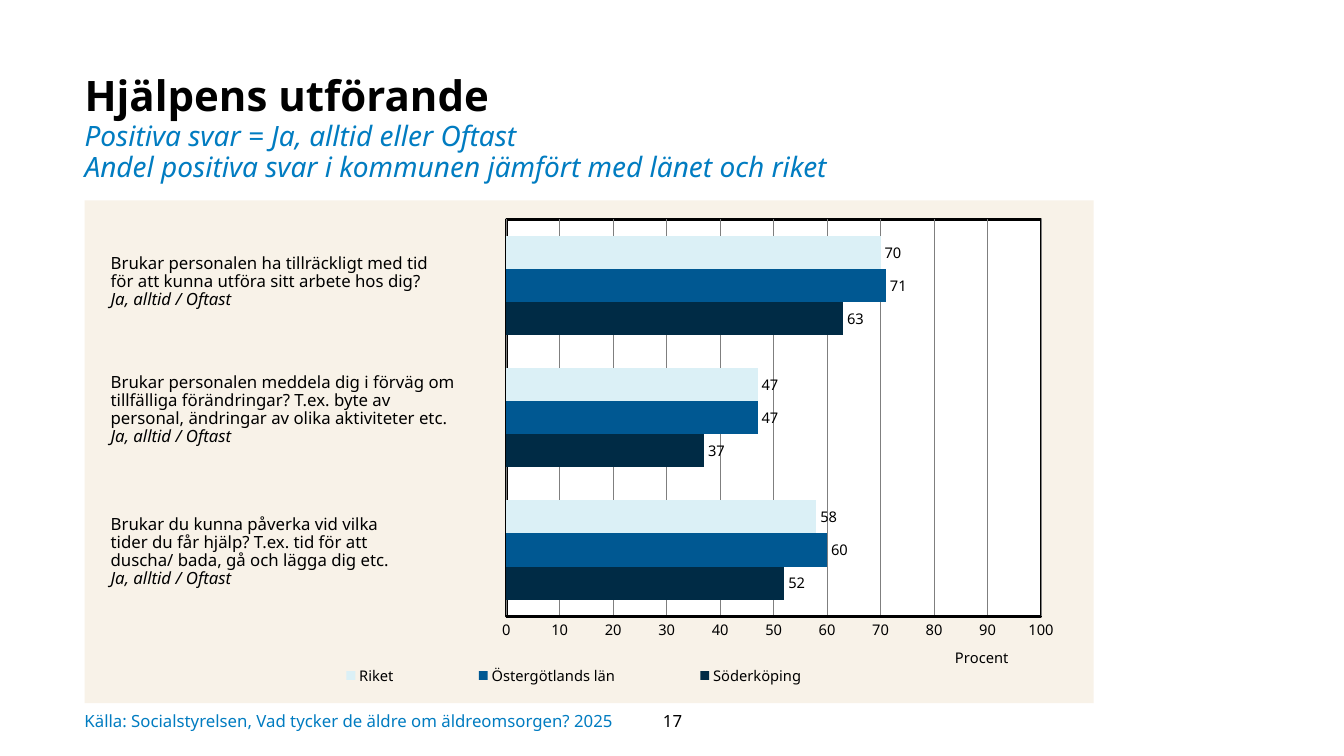
from dataclasses import dataclass

from lxml import etree
from pptx import Presentation
from pptx import util as u
from pptx.chart import data as chart_data
from pptx.dml import color
from pptx.enum import chart as ch
from pptx.enum import text
from pptx.oxml import ns


@dataclass(frozen=True)
class Theme:
    font: str = "Noto Sans"
    black: str = "000000"
    white: str = "FFFFFF"
    accent: str = "017CC1"
    panel: str = "F8F2E8"
    grid: str = "7F7F7F"
    navy: str = "002B45"
    blue: str = "005892"
    pale: str = "DBF0F6"
    heading: float = 30
    subheading: float = 20
    body: float = 12
    chart: float = 10.5


def rgb(value):
    return color.RGBColor.from_string(value)


def set_layout(element, index, inner=False, **fractions):
    for old in element.findall(ns.qn("c:layout")):
        element.remove(old)
    layout = etree.Element(ns.qn("c:layout"))
    manual = etree.SubElement(layout, ns.qn("c:manualLayout"))
    settings = {"layoutTarget": "inner"} if inner else {}
    settings |= {"xMode": "edge", "yMode": "edge", **fractions}
    for name, value in settings.items():
        etree.SubElement(manual, ns.qn(f"c:{name}")).set("val", str(value))
    element.insert(index, layout)


def shape_style(fill, line=None, width=0):
    properties = etree.Element(ns.qn("c:spPr"))

    def add_fill(parent, value):
        solid = etree.SubElement(parent, ns.qn("a:solidFill"))
        etree.SubElement(solid, ns.qn("a:srgbClr")).set("val", value)

    add_fill(properties, fill)
    outline = etree.SubElement(properties, ns.qn("a:ln"))
    if line:
        outline.set("w", str(u.Pt(width)))
        add_fill(outline, line)
    else:
        etree.SubElement(outline, ns.qn("a:noFill"))
    return properties


class SlideBuilder:
    def __init__(self, presentation, theme):
        self.theme = theme
        self.slide = presentation.slides.add_slide(presentation.slide_layouts[5])

    def style_font(self, font, size, fill, bold=False, italic=False):
        font.name = self.theme.font
        font.size = u.Pt(size)
        font.bold = bold
        font.italic = italic
        font.color.rgb = rgb(fill)

    def title(self, heading, subheadings, box):
        theme = self.theme
        shape = self.slide.shapes.title
        shape.left, shape.top, shape.width, shape.height = map(u.Cm, box)
        frame = shape.text_frame
        frame.text = "\n".join([heading, *subheadings])
        frame.word_wrap = True
        frame.auto_size = text.MSO_AUTO_SIZE.NONE
        frame.vertical_anchor = text.MSO_ANCHOR.TOP
        frame.margin_left = frame.margin_top = 0
        for index, paragraph in enumerate(frame.paragraphs):
            paragraph.alignment = text.PP_ALIGN.LEFT
            paragraph.line_spacing = 0.94
            run = paragraph.runs[0]
            if index == 0:
                self.style_font(run.font, theme.heading, theme.black, bold=True)
            else:
                self.style_font(run.font, theme.subheading, theme.accent, italic=True)

    def text_box(self, lines, box, fill, align=text.PP_ALIGN.LEFT):
        shape = self.slide.shapes.add_textbox(*map(u.Cm, box))
        frame = shape.text_frame
        frame.text = "\n".join(lines)
        frame.word_wrap = True
        for paragraph in frame.paragraphs:
            paragraph.alignment = align
            self.style_font(paragraph.runs[0].font, self.theme.body, fill)
        return frame

    def question(self, lines, box):
        answer = "Ja, alltid / Oftast"
        frame = self.text_box([*lines, answer], box, self.theme.black)
        for paragraph in frame.paragraphs:
            paragraph.line_spacing = 0.9
        frame.paragraphs[-1].runs[0].font.italic = True

    def footer(self, line, box, fill, align=text.PP_ALIGN.LEFT):
        frame = self.text_box([line], box, fill, align)
        frame.vertical_anchor = text.MSO_ANCHOR.MIDDLE
        frame.margin_left = frame.margin_right = 0
        frame.margin_top = frame.margin_bottom = 0

    def bar_chart(self, categories, series_rows, box):
        theme = self.theme
        values = chart_data.CategoryChartData(number_format="0")
        values.categories = categories
        for name, numbers, _ in series_rows:
            values.add_series(name, numbers)
        chart = self.slide.shapes.add_chart(
            ch.XL_CHART_TYPE.BAR_CLUSTERED, *map(u.Cm, box), values).chart
        self.style_font(chart.font, theme.chart, theme.black)
        chart.has_title = False

        plot = chart.plots[0]
        plot.gap_width = 100
        plot.overlap = 0
        plot.vary_by_categories = False
        for series, (_, _, fill) in zip(plot.series, series_rows):
            series.format.fill.solid()
            series.format.fill.fore_color.rgb = rgb(fill)
            labels = series.data_labels
            labels.show_value = True
            labels.position = ch.XL_LABEL_POSITION.OUTSIDE_END
            self.style_font(labels.font, theme.chart, theme.black)

        chart.category_axis.visible = False
        axis = chart.value_axis
        axis.minimum_scale, axis.maximum_scale, axis.major_unit = 0, 100, 10
        axis.major_tick_mark = axis.minor_tick_mark = ch.XL_TICK_MARK.NONE
        axis.format.line.color.rgb = rgb(theme.black)
        axis.format.line.width = u.Pt(2)
        axis.major_gridlines.format.line.color.rgb = rgb(theme.grid)
        axis.major_gridlines.format.line.width = u.Pt(0.75)
        self.style_font(axis.tick_labels.font, theme.chart, theme.black)
        axis_title = axis.axis_title
        axis_title.text_frame.text = "Procent"
        run = axis_title.text_frame.paragraphs[0].runs[0]
        self.style_font(run.font, theme.chart, theme.black)

        chart.has_legend = True
        chart.legend.position = ch.XL_LEGEND_POSITION.BOTTOM
        chart.legend.include_in_layout = False
        self.style_font(chart.legend.font, theme.chart, theme.black)

        root = chart.element.find(ns.qn("c:chart"))
        area = root.find(ns.qn("c:plotArea"))
        set_layout(area, 0, inner=True, x=0.418, y=0.038, w=0.53, h=0.789)
        set_layout(root.find(ns.qn("c:legend")), 1, x=0.18, y=0.92, w=0.61, h=0.05)
        set_layout(axis_title.element, 1, x=0.86, y=0.88)
        area.append(shape_style(theme.white, theme.black, 2))
        root.addnext(shape_style(theme.panel))


def main():
    theme = Theme()
    presentation = Presentation()
    presentation.slide_width = u.Cm(33.87)
    presentation.slide_height = u.Cm(19.05)
    builder = SlideBuilder(presentation, theme)
    left = 2.13

    builder.title(
        "Hjälpens utförande",
        ["Positiva svar = Ja, alltid eller Oftast",
         "Andel positiva svar i kommunen jämfört med länet och riket"],
        (left, 1.85, 19.8, 3.07))
    builder.bar_chart(
        ["1", "2", "3"],
        [("Söderköping", (52, 37, 63), theme.navy),
         ("Östergötlands län", (60, 47, 71), theme.blue),
         ("Riket", (58, 47, 70), theme.pale)],
        (left, 5.05, 25.43, 12.67))

    questions = [
        (6.3, 12, ["Brukar personalen ha tillräckligt med tid",
                   "för att kunna utföra sitt arbete hos dig?"]),
        (9.3, 9.45, ["Brukar personalen meddela dig i förväg om tillfälliga förändringar? "
                     "T.ex. byte av personal, ändringar av olika aktiviteter etc."]),
        (12.87, 7.55, ["Brukar du kunna påverka vid vilka tider du får hjälp? "
                       "T.ex. tid för att duscha/ bada, gå och lägga dig etc."]),
    ]
    for top, width, lines in questions:
        builder.question(lines, (2.54, top, width, 2.3))

    builder.footer("Källa: Socialstyrelsen, Vad tycker de äldre om äldreomsorgen? 2025",
                   (left, 17.65, 22.94, 1.02), theme.accent)
    builder.footer("17", (15.65, 17.65, 2.6, 1.02), theme.black, text.PP_ALIGN.CENTER)
    presentation.save("out.pptx")


if __name__ == "__main__":
    main()
